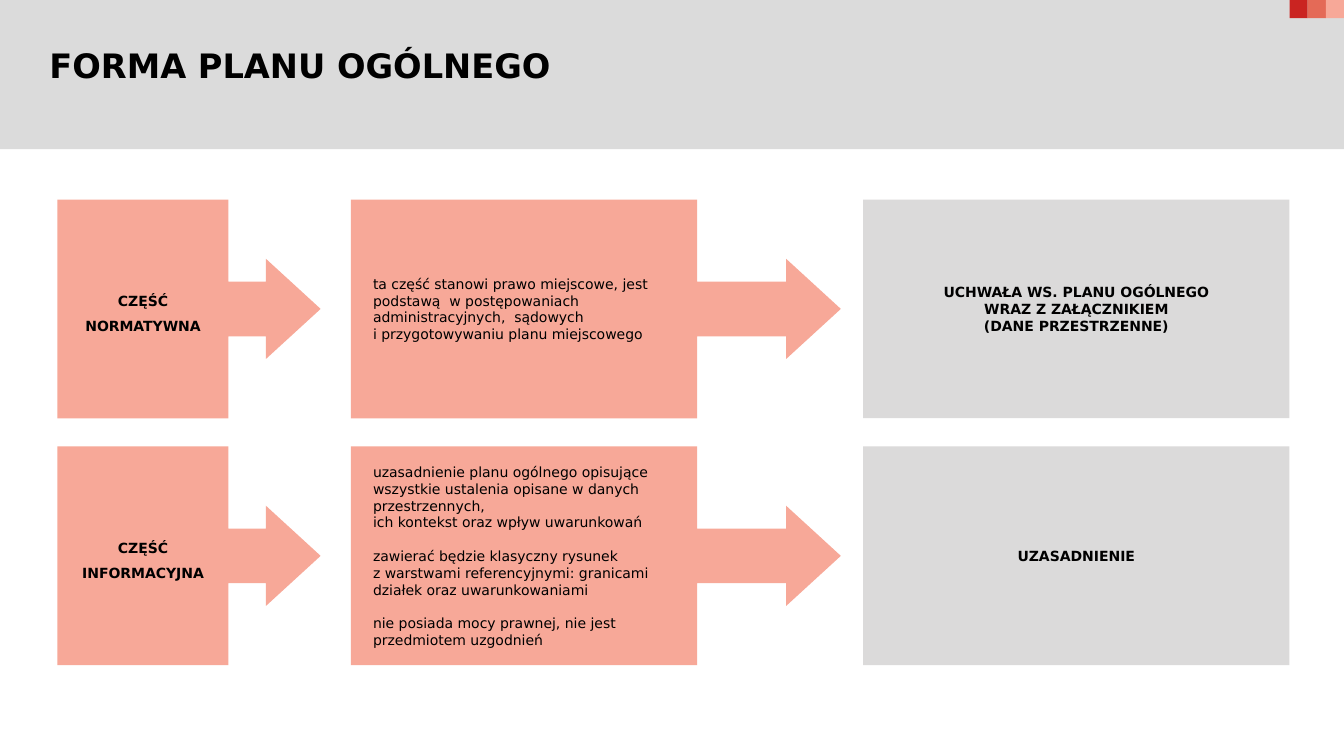
from pptx import Presentation
from pptx import util as u
from pptx.dml.color import RGBColor
from pptx.enum import shapes, text

FONT = "DejaVu Sans"
BLACK, SALMON, GREY, BAND = "000000", "F7A898", "DBDADA", "DBDBDB"
WIDTH, HEIGHT = 13.33, 7.5
ROW_TOP, ROW_PITCH, ROW_HEIGHT = 1.98, 2.45, 2.17
PART_COLUMN, DETAIL_COLUMN, RESULT_COLUMN = (0.57, 2.61), (3.48, 4.86), (8.56, 4.23)

ROWS = [
    ("CZĘŚĆ NORMATYWNA",
     ["ta część stanowi prawo miejscowe, jest podstawą  w postępowaniach "
      "administracyjnych,  sądowych\vi przygotowywaniu planu miejscowego"],
     "UCHWAŁA WS. PLANU OGÓLNEGO\vWRAZ Z ZAŁĄCZNIKIEM\v(DANE PRZESTRZENNE)"),
    ("CZĘŚĆ INFORMACYJNA",
     ["uzasadnienie planu ogólnego opisujące wszystkie ustalenia opisane "
      "w danych przestrzennych,\vich kontekst oraz wpływ uwarunkowań",
      "zawierać będzie klasyczny rysunek\vz warstwami referencyjnymi: "
      "granicami działek oraz uwarunkowaniami",
      "nie posiada mocy prawnej, nie jest przedmiotem uzgodnień"],
     "UZASADNIENIE"),
]


def color(value):
    """Return the colour for a hex string."""
    return RGBColor.from_string(value)


def set_font(paragraph, size, bold):
    """Format a whole paragraph in the slide's font."""
    font = paragraph.font
    font.name, font.size, font.bold = FONT, u.Pt(size), bold
    font.color.rgb = color(BLACK)


def add_block(slide, box, fill, kind=shapes.MSO_SHAPE.RECTANGLE):
    """Add a flat shape without outline in the given box."""
    shape = slide.shapes.add_shape(kind, *map(u.Inches, box))
    shape.shadow.inherit = False
    shape.fill.solid()
    shape.fill.fore_color.rgb = color(fill)
    shape.line.fill.background()
    return shape


def add_callout(slide, box, body_share):
    """Add a salmon box whose right side ends in an arrow."""
    shape = add_block(slide, box, SALMON, shapes.MSO_SHAPE.RIGHT_ARROW_CALLOUT)
    for index, value in enumerate((0.25, 0.229, 0.25, body_share)):
        shape.adjustments[index] = value
    return shape


def write(shape, paragraphs, bold=True, centred=True, spacing=None):
    """Fill a shape with vertically centred paragraphs."""
    frame = shape.text_frame
    frame.word_wrap = True
    frame.vertical_anchor = text.MSO_ANCHOR.MIDDLE
    frame.text = "\n".join(paragraphs)
    for index, paragraph in enumerate(frame.paragraphs):
        paragraph.alignment = text.PP_ALIGN.CENTER if centred else text.PP_ALIGN.LEFT
        paragraph.line_spacing = spacing
        if index:
            paragraph.space_before = u.Pt(12)
        set_font(paragraph, 10, bold)


def add_header(slide, box):
    """Place the title on a grey band with colour squares at its right end."""
    left, top, width, height = box
    title = slide.shapes.title
    band = add_block(slide, box, BAND)
    title.element.addprevious(band.element)
    title.left, title.top = u.Inches(left + 0.39), u.Inches(top + 0.4)
    title.width, title.height = u.Inches(12.08), u.Inches(0.5)
    frame = title.text_frame
    frame.text = "FORMA PLANU OGÓLNEGO"
    frame.auto_size = text.MSO_AUTO_SIZE.NONE
    frame.vertical_anchor = text.MSO_ANCHOR.TOP
    frame.paragraphs[0].alignment = text.PP_ALIGN.LEFT
    set_font(frame.paragraphs[0], 24, True)
    side = 0.18
    for index, fill in enumerate(("CA2421", "E46A57", SALMON)):
        add_block(slide, (left + width - (3 - index) * side, top, side, side), fill)


def add_row(slide, top, part, details, result):
    """Add one part of the plan, its description and its outcome."""
    part_box, detail_box, result_box = (
        (left, top, width, ROW_HEIGHT)
        for left, width in (PART_COLUMN, DETAIL_COLUMN, RESULT_COLUMN))
    write(add_callout(slide, part_box, 0.65), [part], spacing=1.5)
    description = add_callout(slide, detail_box, 0.707)
    description.text_frame.margin_left = u.Inches(0.22)
    write(description, details, bold=False, centred=False)
    write(add_block(slide, result_box, GREY), [result])


def main():
    """Build the slide and save the presentation."""
    presentation = Presentation()
    presentation.slide_width, presentation.slide_height = u.Inches(WIDTH), u.Inches(HEIGHT)
    slide = presentation.slides.add_slide(presentation.slide_layouts[5])
    add_header(slide, (0, 0, WIDTH, 1.48))
    for index, row in enumerate(ROWS):
        add_row(slide, ROW_TOP + index * ROW_PITCH, *row)
    presentation.save("out.pptx")


if __name__ == "__main__":
    main()
